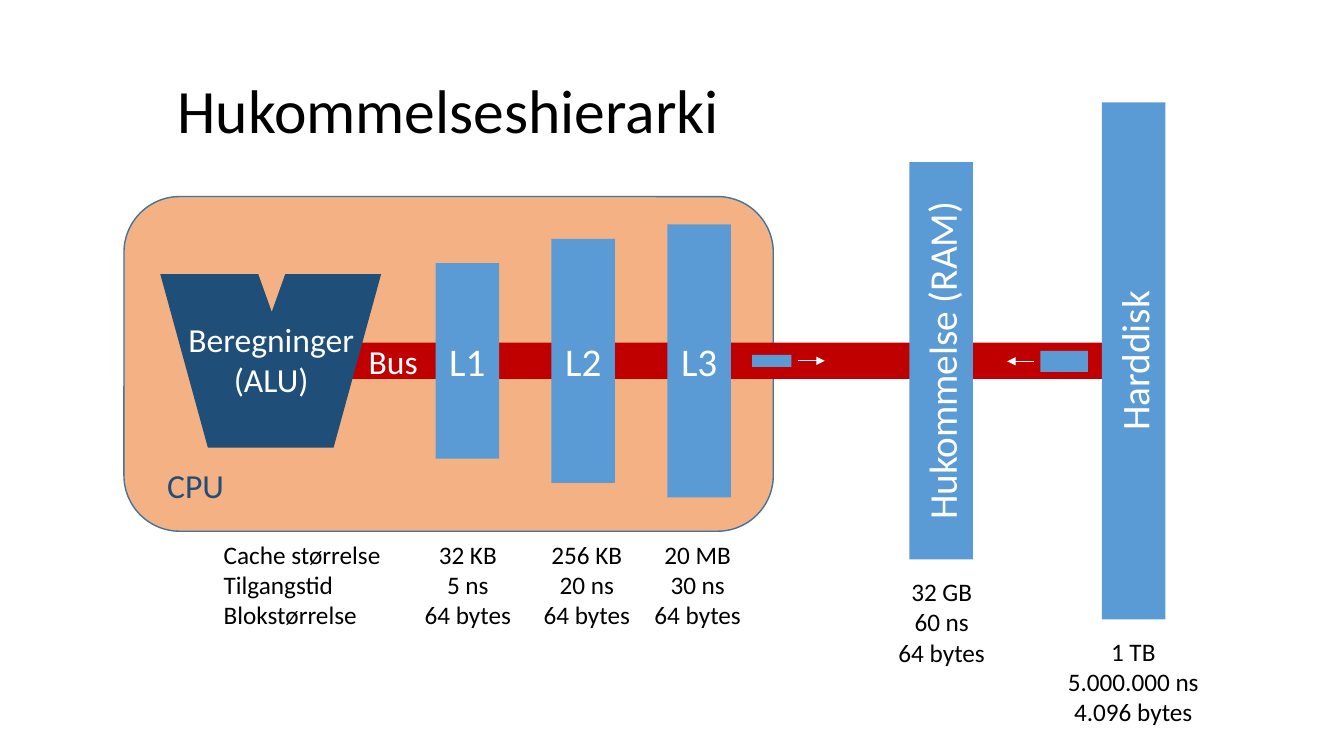
from dataclasses import dataclass

from lxml import etree
from pptx import Presentation
from pptx.dml.color import RGBColor
from pptx.enum.shapes import MSO_CONNECTOR, MSO_SHAPE
from pptx.enum.text import MSO_ANCHOR, MSO_AUTO_SIZE, PP_ALIGN
from pptx.oxml.ns import qn
from pptx.util import Inches, Pt

RECTANGLE = MSO_SHAPE.RECTANGLE
ROUNDED = MSO_SHAPE.ROUNDED_RECTANGLE
TRAPEZOID = MSO_SHAPE.TRAPEZOID
TRIANGLE = MSO_SHAPE.ISOSCELES_TRIANGLE
STRAIGHT = MSO_CONNECTOR.STRAIGHT
LEFT, CENTER = PP_ALIGN.LEFT, PP_ALIGN.CENTER
TOP, MIDDLE = MSO_ANCHOR.TOP, MSO_ANCHOR.MIDDLE
TITLE_ONLY = 5


@dataclass(frozen=True)
class Theme:
    font: str = "Calibri"
    black: str = "000000"
    white: str = "FFFFFF"
    cpu: str = "F4B183"
    outline: str = "43739E"
    bus: str = "C00000"
    memory: str = "5B9BD5"
    alu: str = "1F4E79"
    title_size: int = 44
    memory_size: int = 28
    label_size: int = 24
    fact_size: int = 18


@dataclass(frozen=True)
class Box:
    left: float
    top: float
    width: float
    height: float

    def inside(self, left, top, width, height):
        """A box whose offset is measured from this box's corner."""
        return Box(self.left + left, self.top + top, width, height)

    def lengths(self):
        return [Inches(n) for n in (self.left, self.top, self.width, self.height)]


@dataclass(frozen=True)
class Memory:
    name: str
    left: float
    height: float
    facts: str
    facts_box: Box
    vertical: bool = False


THEME = Theme()
BAR_WIDTH = 0.63
FACTS_HEIGHT = 1.01
CACHE_FACTS_TOP = 5.3
CPU_BOX = Box(1.23, 1.95, 6.44, 3.32)
BUS_BOX = Box(2.47, 3.4, 8.68, 0.36)

MEMORIES = [
    Memory("L1", 4.32, 1.94, "32 KB\n5 ns\n64 bytes",
           Box(4.02, CACHE_FACTS_TOP, 1.24, FACTS_HEIGHT)),
    Memory("L2", 5.47, 2.42, "256 KB\n20 ns\n64 bytes",
           Box(5.2, CACHE_FACTS_TOP, 1.24, FACTS_HEIGHT)),
    Memory("L3", 6.62, 2.71, "20 MB\n30 ns\n64 bytes",
           Box(6.3, CACHE_FACTS_TOP, 1.24, FACTS_HEIGHT)),
    Memory("Hukommelse (RAM)", 9.02, 3.94, "32 GB\n60 ns\n64 bytes",
           Box(8.72, 5.67, 1.24, FACTS_HEIGHT), True),
    Memory("Harddisk", 10.93, 5.13, "1 TB\n5.000.000 ns\n4.096 bytes",
           Box(10.37, 6.26, 1.74, FACTS_HEIGHT), True),
]


def rgb(color):
    return RGBColor.from_string(color)


def write(text_frame, text, size, color, align=CENTER, anchor=TOP):
    text_frame.text = text
    text_frame.word_wrap = True
    text_frame.auto_size = MSO_AUTO_SIZE.NONE
    text_frame.vertical_anchor = anchor
    for paragraph in text_frame.paragraphs:
        paragraph.alignment = align
        for run in paragraph.runs:
            run.font.name = THEME.font
            run.font.size = Pt(size)
            run.font.color.rgb = rgb(color)


def add_text(slide, box, text, size, color, align=CENTER):
    textbox = slide.shapes.add_textbox(*box.lengths())
    write(textbox.text_frame, text, size, color, align)


def add_block(slide, kind, box, fill):
    shape = slide.shapes.add_shape(kind, *box.lengths())
    shape.shadow.inherit = False
    shape.fill.solid()
    shape.fill.fore_color.rgb = rgb(fill)
    shape.line.fill.background()
    return shape


def add_arrow(slide, start, end, y):
    arrow = slide.shapes.add_connector(
        STRAIGHT, Inches(start), Inches(y), Inches(end), Inches(y))
    arrow.line.color.rgb = rgb(THEME.white)
    arrow.line.width = Pt(0.5)
    etree.SubElement(arrow.line._get_or_add_ln(), qn("a:tailEnd"), type="triangle")
    etree.SubElement(arrow._element.spPr, qn("a:effectLst"))


def add_title(slide, box):
    title = slide.shapes.title
    title.left, title.top, title.width, title.height = box.lengths()
    write(title.text_frame, "Hukommelseshierarki", THEME.title_size, THEME.black,
          anchor=MIDDLE)
    title.text_frame.paragraphs[0].line_spacing = 0.9


def add_cpu(slide, box):
    cpu = add_block(slide, ROUNDED, box, THEME.cpu)
    cpu.line.color.rgb = rgb(THEME.outline)
    cpu.line.width = Pt(1)
    add_text(slide, box.inside(0.33, 2.61, 2.48, 0.5), "CPU", THEME.label_size,
             THEME.alu, LEFT)


def add_alu(slide, box):
    body = add_block(slide, TRAPEZOID, box, THEME.alu)
    body.adjustments[0] = 0.274
    notch = add_block(slide, TRIANGLE, box.inside(0.88, -0.26, 0.45, 0.63), THEME.cpu)
    for shape in (body, notch):
        shape.rotation = 180
    add_text(slide, box.inside(-0.14, 0.39, 2.48, 0.91), "Beregninger\n(ALU)",
             THEME.label_size, THEME.white)


def add_memory(slide, memory, middle):
    box = Box(memory.left, middle - memory.height / 2, BAR_WIDTH, memory.height)
    bar = add_block(slide, RECTANGLE, box, THEME.memory)
    write(bar.text_frame, memory.name, THEME.memory_size, THEME.white, anchor=MIDDLE)
    if memory.vertical:
        bar.text_frame._txBody.bodyPr.set("vert", "vert270")
    add_text(slide, memory.facts_box, memory.facts, THEME.fact_size, THEME.black)


def add_packet(slide, box, direction):
    """A block of data with an arrow; direction is 1 for right, -1 for left."""
    add_block(slide, RECTANGLE, box, THEME.memory)
    edge = box.left + (box.width if direction > 0 else 0)
    start = edge + 0.06 * direction
    add_arrow(slide, start, start + 0.27 * direction, box.top + box.height / 2)


def build_slide(presentation):
    slide = presentation.slides.add_slide(presentation.slide_layouts[TITLE_ONLY])
    add_title(slide, Box(CPU_BOX.left, 0.4, CPU_BOX.width, 1.45))

    # Processor and the bus that leaves it
    add_cpu(slide, CPU_BOX)
    add_block(slide, RECTANGLE, BUS_BOX, THEME.bus)
    add_alu(slide, CPU_BOX.inside(0.36, 0.77, 2.19, 1.72))
    add_text(slide, BUS_BOX.inside(0.19, -0.07, 2.48, 0.5), "Bus",
             THEME.label_size, THEME.white)

    # Memory levels, centred on the bus
    for memory in MEMORIES:
        add_memory(slide, memory, BUS_BOX.top + BUS_BOX.height / 2)
    add_text(slide, Box(2.12, CACHE_FACTS_TOP, 1.89, FACTS_HEIGHT),
             "Cache størrelse\nTilgangstid\nBlokstørrelse",
             THEME.fact_size, THEME.black, LEFT)

    # Data travelling on the bus
    add_packet(slide, BUS_BOX.inside(4.99, 0.12, 0.39, 0.12), 1)
    add_packet(slide, BUS_BOX.inside(7.85, 0.08, 0.47, 0.21), -1)


def main():
    presentation = Presentation()
    presentation.slide_width = Inches(13.33)
    presentation.slide_height = Inches(7.5)
    build_slide(presentation)
    presentation.save("out.pptx")


if __name__ == "__main__":
    main()
